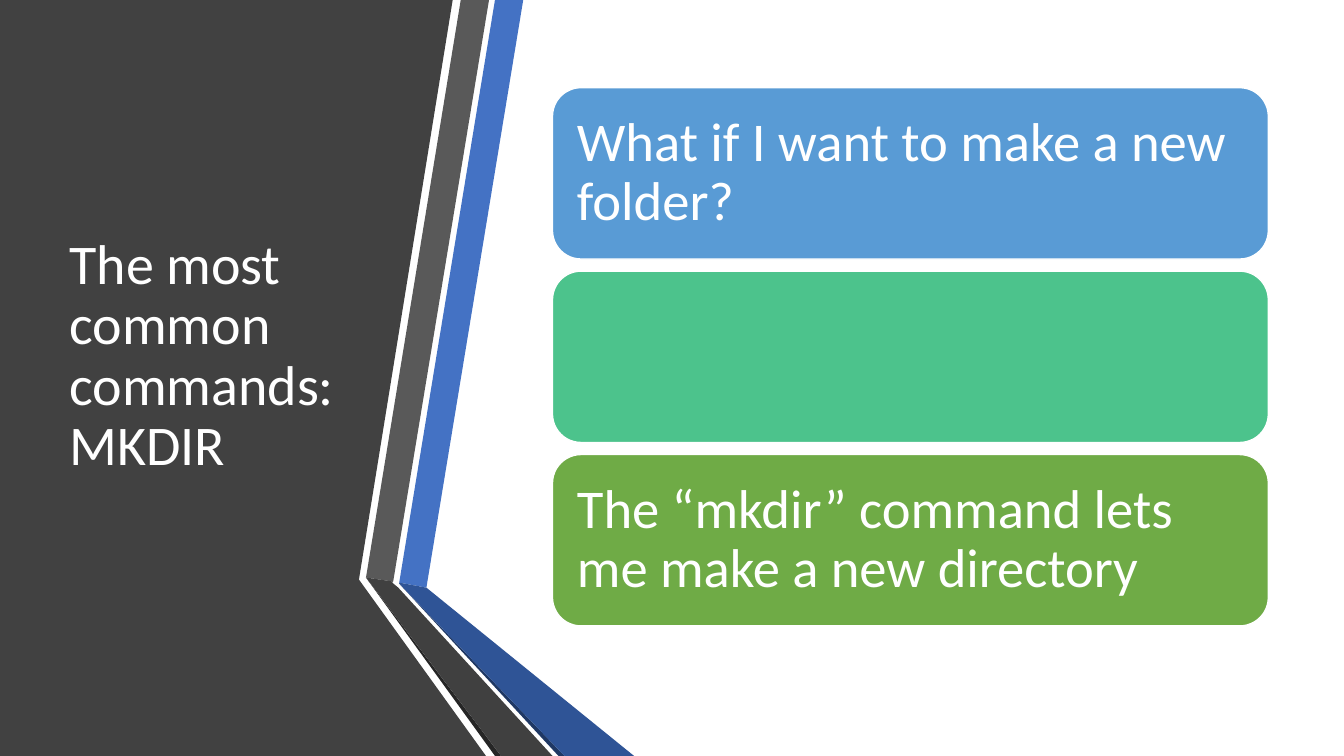
import pptx
import pptx.dml.color
import pptx.enum.shapes
import pptx.enum.text
import pptx.util
from pptx.util import Inches

COLORS = {
    "white": "FFFFFF", "panel": "414141",
    "blue": "4472C4", "blue_fold": "2F5496", "blue_shade": "1F3864",
    "gray": "595959", "gray_fold": "404040", "gray_shade": "262626",
    "question": "599BD5", "gap": "4CC38C", "answer": "6FAB46",
}


def rgb(name):
    return pptx.dml.color.RGBColor.from_string(COLORS[name])


def write_text(shape, text, size, insets):
    frame = shape.text_frame
    frame.word_wrap = True
    frame.vertical_anchor = pptx.enum.text.MSO_ANCHOR.MIDDLE
    frame.margin_left, frame.margin_top, frame.margin_right, frame.margin_bottom = map(Inches, insets)
    paragraph = frame.paragraphs[0]
    paragraph.alignment = pptx.enum.text.PP_ALIGN.LEFT
    paragraph.line_spacing = 0.9
    run = paragraph.add_run()
    run.text = text
    run.font.name = "Calibri"
    run.font.size = pptx.util.Pt(size)
    run.font.color.rgb = rgb("white")


presentation = pptx.Presentation()
presentation.slide_width = Inches(13.33)
presentation.slide_height = Inches(7.5)
slide = presentation.slides.add_slide(presentation.slide_layouts[6])

# Dark panel and folded ribbons, from back to front
outlines = [
    ("panel", [(0, 0), (4.49, 0), (3.56, 5.75), (4.82, 7.5), (0, 7.5)]),
    ("blue", [(3.96, 5.78), (4.23, 5.83), (5.19, 0), (4.91, 0)]),
    ("gray", [(4.85, 0), (4.57, 0), (3.63, 5.73), (3.9, 5.77)]),
    ("gray_shade", [(3.63, 5.73), (4.91, 7.5), (4.97, 7.5)]),
    ("blue_shade", [(3.96, 5.79), (5.54, 7.5), (5.6, 7.5)]),
    ("blue_fold", [(3.96, 5.79), (5.6, 7.5), (6.29, 7.5), (4.23, 5.83), (3.96, 5.78)]),
    ("gray_fold", [(5.48, 7.5), (3.95, 5.83), (3.89, 5.78), (3.9, 5.77), (3.63, 5.73), (4.97, 7.5)]),
]
for color, outline in outlines:
    points = [(Inches(x), Inches(y)) for x, y in outline]
    builder = slide.shapes.build_freeform(*points[0])
    builder.add_line_segments(points[1:], close=True)
    shape = builder.convert_to_shape()
    shape.shadow.inherit = False
    shape.fill.solid()
    shape.fill.fore_color.rgb = rgb(color)
    shape.line.fill.background()

# Title
title = slide.shapes.add_textbox(Inches(0.59), Inches(0.75), Inches(3.04), Inches(5.58))
write_text(title, "The most common commands: MKDIR", 40, (0.1, 0.05, 0.1, 0.05))

# Cards, evenly stacked
cards = [
    ("question", "What if I want to make a new folder?"),
    ("gap", None),
    ("answer", "The “mkdir” command lets me make a new directory"),
]
for index, (color, text) in enumerate(cards):
    card = slide.shapes.add_shape(
        pptx.enum.shapes.MSO_SHAPE.ROUNDED_RECTANGLE,
        Inches(5.48), Inches(0.87 + 1.82 * index), Inches(7.1), Inches(1.7))
    card.shadow.inherit = False
    card.fill.solid()
    card.fill.fore_color.rgb = rgb(color)
    card.line.color.rgb = rgb("white")
    card.line.width = pptx.util.Pt(1)
    if text:
        write_text(card, text, 39, (0.16, 0.16, 0.16, 0.16))

presentation.save("out.pptx")
